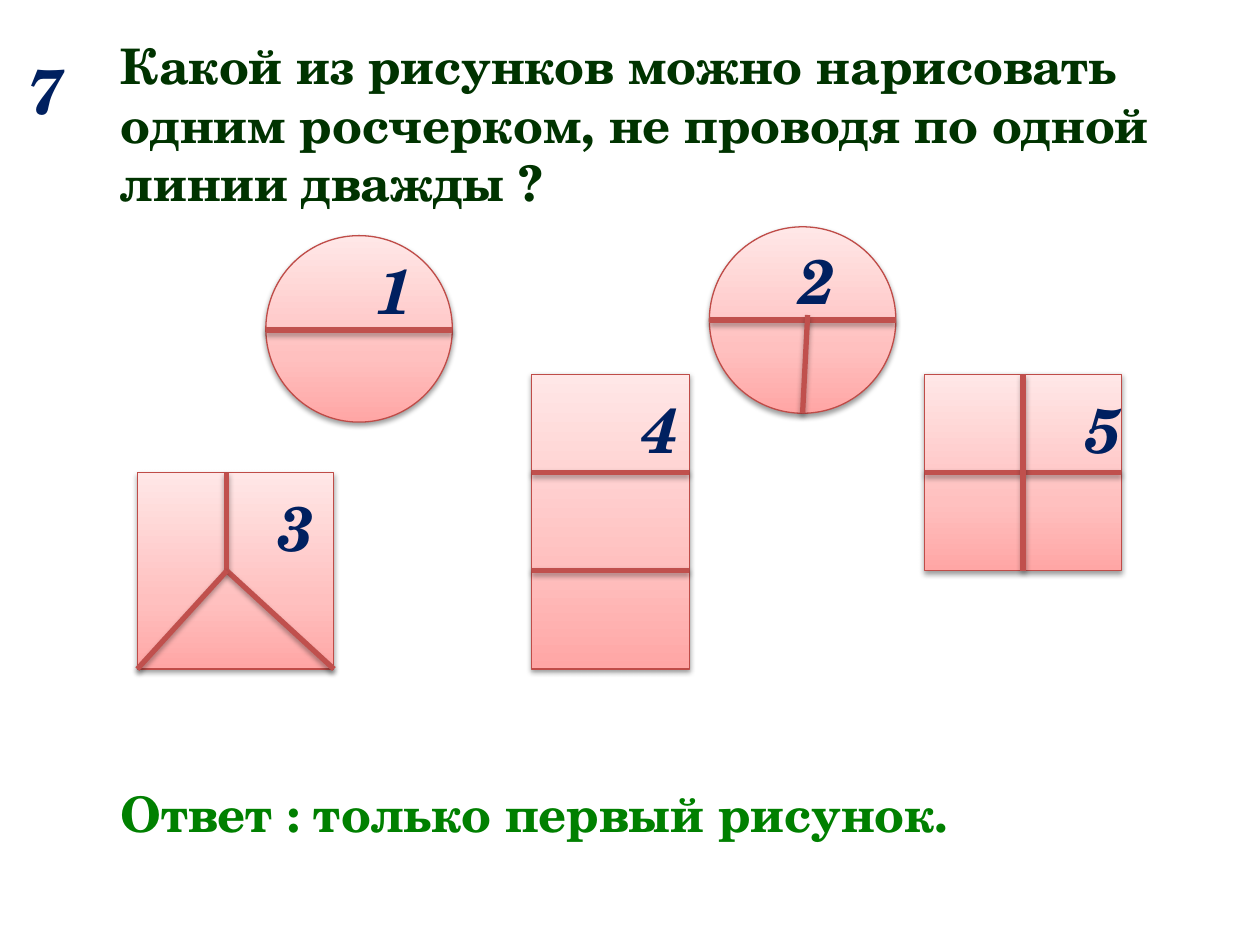
from dataclasses import dataclass

from copy import deepcopy
from lxml import etree
from pptx import Presentation
from pptx import util as u
from pptx.dml.color import RGBColor
from pptx.enum import shapes, text
from pptx.oxml.ns import qn

PX = 9144


def px(*lengths):
    return [u.Emu(length * PX) for length in lengths]


@dataclass(frozen=True)
class Theme:
    font: str = "TeX Gyre Schola"
    question: str = "003300"
    answer: str = "008000"
    number: str = "002060"
    outline: str = "BF4C48"
    stroke: str = "C0504D"
    gradient: tuple = ((0, "FFA6A5"), (0.35, "FFC0BF"), (1, "FFE7E7"))
    text_size: int = 28
    number_size: int = 36
    outline_width: float = 0.75
    stroke_width: float = 3


class PuzzleSlide:
    def __init__(self, slide, theme):
        self.slide = slide
        self.theme = theme

    def lettering(self, holder, words, size, color, italic=False, wrap=True):
        frame = holder.text_frame
        frame.text = words
        layout = dict(word_wrap=wrap, auto_size=text.MSO_AUTO_SIZE.NONE,
                      vertical_anchor=text.MSO_ANCHOR.TOP)
        for name, value in layout.items():
            setattr(frame, name, value)
        paragraph = frame.paragraphs[0]
        paragraph.alignment = text.PP_ALIGN.LEFT
        style = dict(name=self.theme.font, size=u.Pt(size), bold=True, italic=italic)
        for name, value in style.items():
            setattr(paragraph.font, name, value)
        paragraph.font.color.rgb = RGBColor.from_string(color)

    def title(self, words, box):
        title = self.slide.shapes.title
        for name, value in zip(("left", "top", "width", "height"), px(*box)):
            setattr(title, name, value)
        self.lettering(title, words, self.theme.text_size, self.theme.question)

    def answer(self, words, box):
        answer = self.slide.shapes.add_textbox(*px(*box))
        self.lettering(answer, words, self.theme.text_size, self.theme.answer)

    def number(self, digit, left, top):
        number = self.slide.shapes.add_textbox(*px(left, top, 39, 71))
        self.lettering(number, digit, self.theme.number_size, self.theme.number,
                       italic=True, wrap=False)

    def outline(self, part, color, width):
        part.line.color.rgb = RGBColor.from_string(color)
        part.line.width = u.Pt(width)

    def shadow(self, part, distance, opacity):
        effects = etree.SubElement(part._element.spPr, qn("a:effectLst"))
        outer = etree.SubElement(effects, qn("a:outerShdw"), blurRad=str(u.Pt(3.1)),
                                 dist=str(u.Pt(distance)), dir="5400000", rotWithShape="0")
        black = etree.SubElement(outer, qn("a:srgbClr"), val="000000")
        etree.SubElement(black, qn("a:alpha"), val=str(opacity * 1000))

    def figure(self, kind, box):
        figure = self.slide.shapes.add_shape(kind, *px(*box))
        figure.fill.gradient()
        figure.fill.gradient_angle = 90
        stops = figure._element.spPr.find(qn("a:gradFill")).find(qn("a:gsLst"))
        stops.append(deepcopy(stops[0]))
        for stop, (position, color) in zip(figure.fill.gradient_stops, self.theme.gradient):
            stop.position = position
            stop.color.rgb = RGBColor.from_string(color)
        self.outline(figure, self.theme.outline, self.theme.outline_width)
        self.shadow(figure, 1.6, 38)

    def stroke(self, ends):
        stroke = self.slide.shapes.add_connector(shapes.MSO_CONNECTOR.STRAIGHT, *px(*ends))
        self.outline(stroke, self.theme.stroke, self.theme.stroke_width)
        self.shadow(stroke, 1.8, 35)


CIRCLE = shapes.MSO_SHAPE.OVAL
RECTANGLE = shapes.MSO_SHAPE.RECTANGLE
FIGURES = [
    (CIRCLE, (211, 187, 148, 148), [(211, 262, 359, 262)]),
    (CIRCLE, (563, 180, 148, 148), [(563, 254, 711, 254), (641, 250, 637, 328)]),
    (RECTANGLE, (422, 297, 125, 234), [(422, 375, 547, 375), (422, 453, 547, 453)]),
    (RECTANGLE, (734, 297, 156, 156), [(734, 375, 890, 375), (812, 453, 812, 297)]),
    (RECTANGLE, (109, 375, 156, 156),
     [(180, 375, 180, 453), (180, 453, 265, 531), (180, 453, 109, 531)]),
]
NUMBERS = {"7": (12, 36), "1": (289, 195), "2": (625, 187),
           "3": (211, 383), "4": (500, 305), "5": (852, 305)}


def main():
    deck = Presentation()
    deck.slide_width, deck.slide_height = px(1000, 750)
    puzzle = PuzzleSlide(deck.slides.add_slide(deck.slide_layouts[5]), Theme())
    puzzle.title("Какой из рисунков можно нарисовать одним росчерком, "
                 "не проводя по одной линии дважды ?", (86, 23, 874, 151))
    puzzle.answer("Ответ : только первый рисунок.", (86, 617, 882, 57))
    for kind, box, strokes in FIGURES:
        puzzle.figure(kind, box)
        for ends in strokes:
            puzzle.stroke(ends)
    for digit, corner in NUMBERS.items():
        puzzle.number(digit, *corner)
    deck.save("out.pptx")


if __name__ == "__main__":
    main()
